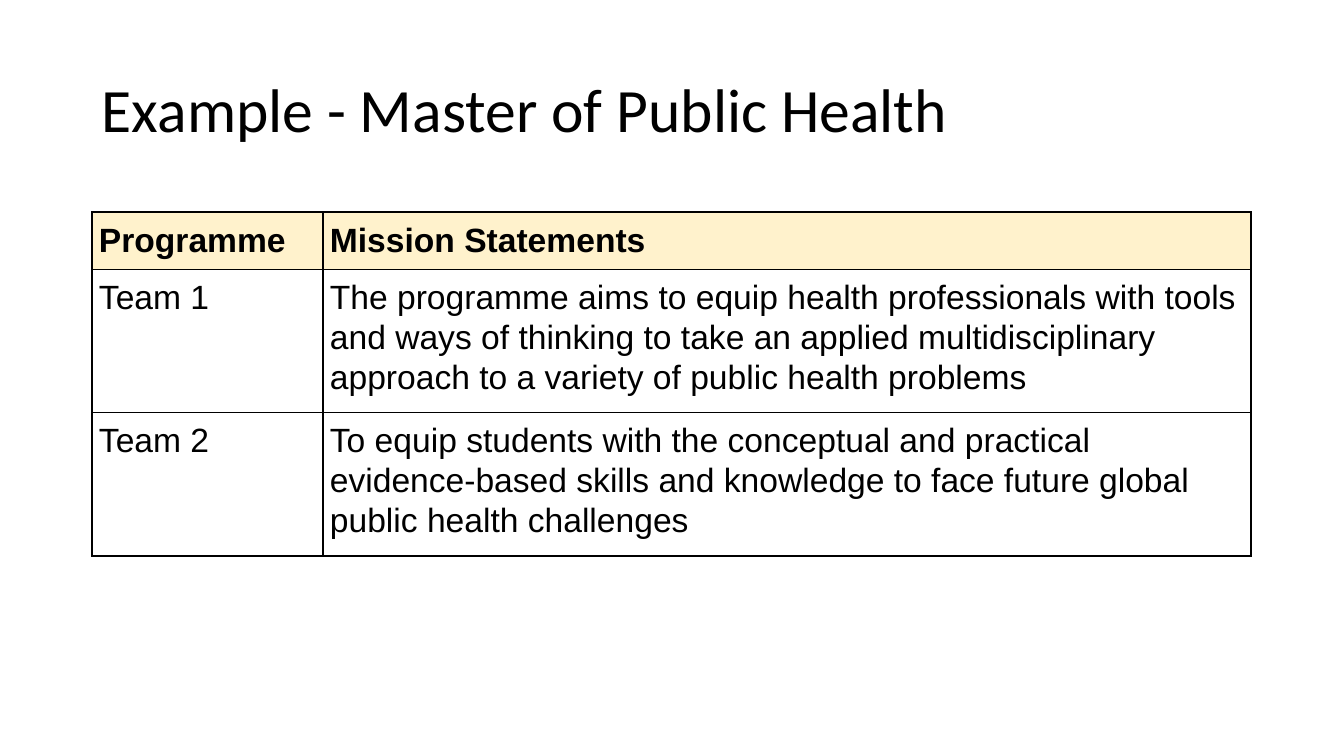
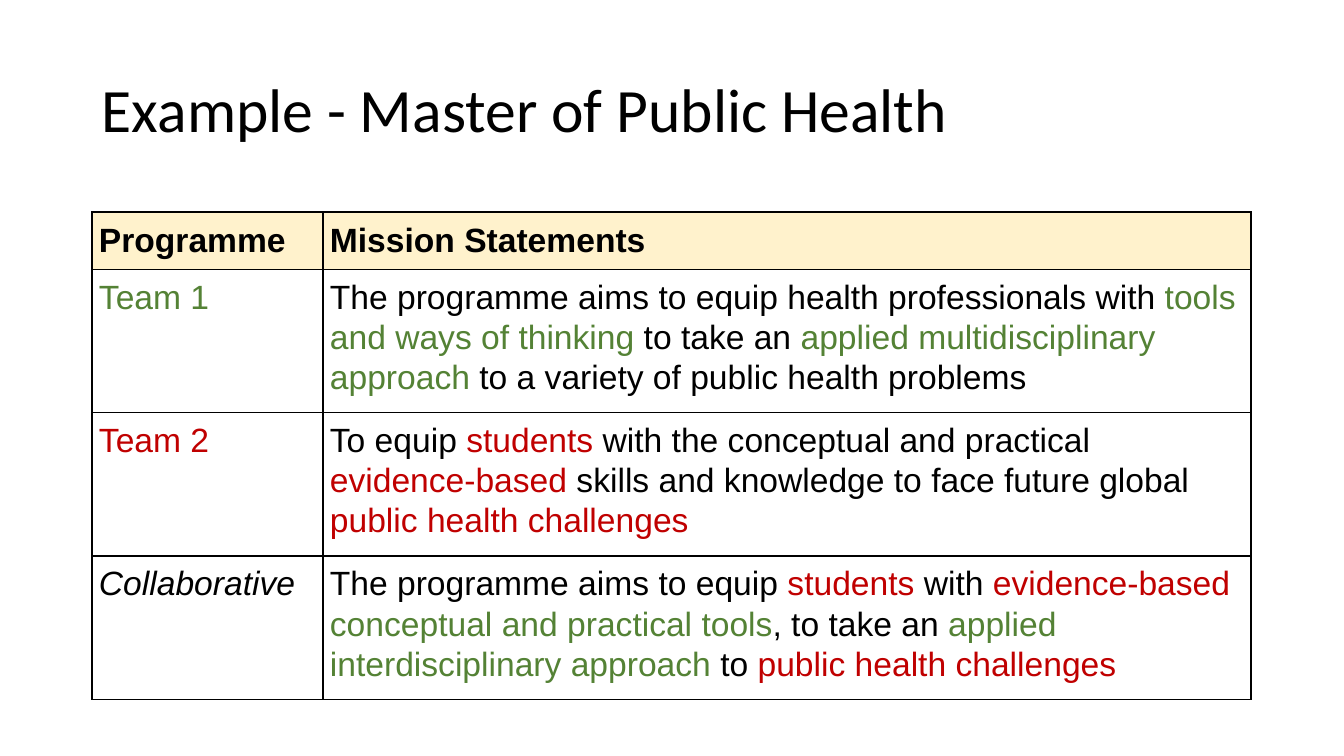
"""Build two slides comparing programme mission statements in a table."""
import pptx
import pptx.dml.color
import pptx.enum.text
import pptx.oxml
import pptx.oxml.ns
import pptx.util

PX = 914400 / 100.8
COLORS = {"ink": "000000", "header": "FFF2CC", "team1": "548235", "team2": "C00000"}
TITLE = "Example - Master of Public Health"
HEADINGS = ("Programme", "Mission Statements")
COLUMN_WIDTHS = (231, 928)
HEADER_HEIGHT, STATEMENT_HEIGHT = 54, 134
CELL_INSET = 7
MISSIONS = [
    ([("Team 1", "team1")],
     [("The programme aims to equip health professionals with ", "ink"),
      ("tools and ways of thinking", "team1"),
      (" to take an ", "ink"),
      ("applied multidisciplinary approach ", "team1"),
      ("to a variety of public health problems", "ink")]),
    ([("Team 2", "team2")],
     [("To equip ", "ink"),
      ("students", "team2"),
      (" with the conceptual and practical ", "ink"),
      ("evidence-based ", "team2"),
      ("skills and knowledge to face future global ", "ink"),
      ("public health challenges", "team2")]),
    ([("Collaborative", "ink")],
     [("The programme aims to equip ", "ink"),
      ("students", "team2"),
      (" with ", "ink"),
      ("evidence-based ", "team2"),
      ("conceptual and practical tools", "team1"),
      (", to take an ", "ink"),
      ("applied interdisciplinary approach ", "team1"),
      ("to ", "ink"),
      ("public health challenges", "team2")]),
]


def px(*lengths):
    return [pptx.util.Emu(round(length * PX)) for length in lengths]


def style_paragraph(paragraph, font_name, size, line_spacing):
    paragraph.line_spacing = line_spacing
    paragraph.font.name = font_name
    paragraph.font.size = pptx.util.Pt(size)
    paragraph.font.color.rgb = pptx.dml.color.RGBColor.from_string(COLORS["ink"])


deck = pptx.Presentation()
deck.slide_width, deck.slide_height = px(1344, 756)

for mission_count, highlighted in ((2, False), (3, True)):
    slide = deck.slides.add_slide(deck.slide_layouts[6])

    title = slide.shapes.add_textbox(*px(92, 40, 1159, 146)).text_frame
    title.word_wrap = True
    title.vertical_anchor = pptx.enum.text.MSO_ANCHOR.MIDDLE
    title.text = TITLE
    style_paragraph(title.paragraphs[0], "Calibri", 44, 0.9)

    rows = [[[(heading, "ink")] for heading in HEADINGS]] + MISSIONS[:mission_count]
    heights = [HEADER_HEIGHT] + [STATEMENT_HEIGHT] * mission_count
    missions = slide.shapes.add_table(
        len(rows), len(HEADINGS), *px(92, 212, sum(COLUMN_WIDTHS), sum(heights))).table
    missions.first_row = missions.horz_banding = False
    for column, width in zip(missions.columns, px(*COLUMN_WIDTHS)):
        column.width = width
    for row, height in zip(missions.rows, px(*heights)):
        row.height = height

    for row_index, row_phrases in enumerate(rows):
        for column_index, phrases in enumerate(row_phrases):
            cell = missions.cell(row_index, column_index)
            (cell.margin_left, cell.margin_right,
             cell.margin_top, cell.margin_bottom) = px(*[CELL_INSET] * 4)

            properties = cell._tc.get_or_add_tcPr()
            for side in ("lnL", "lnR", "lnT", "lnB"):
                properties.append(pptx.oxml.parse_xml(
                    f'<a:{side} {pptx.oxml.ns.nsdecls("a")} w="12700"><a:solidFill>'
                    f'<a:srgbClr val="{COLORS["ink"]}"/></a:solidFill></a:{side}>'))
            if row_index == 0:
                cell.fill.solid()
                cell.fill.fore_color.rgb = pptx.dml.color.RGBColor.from_string(COLORS["header"])
            else:
                cell.fill.background()

            paragraph = cell.text_frame.paragraphs[0]
            style_paragraph(paragraph, "Arial", 24, 1.07)
            paragraph.font.bold = row_index == 0
            paragraph.font.italic = phrases[0][0] == "Collaborative"
            for phrase, color in phrases:
                run = paragraph.add_run()
                run.text = phrase
                if highlighted and color != "ink":
                    run.font.color.rgb = pptx.dml.color.RGBColor.from_string(COLORS[color])

deck.save("out.pptx")
